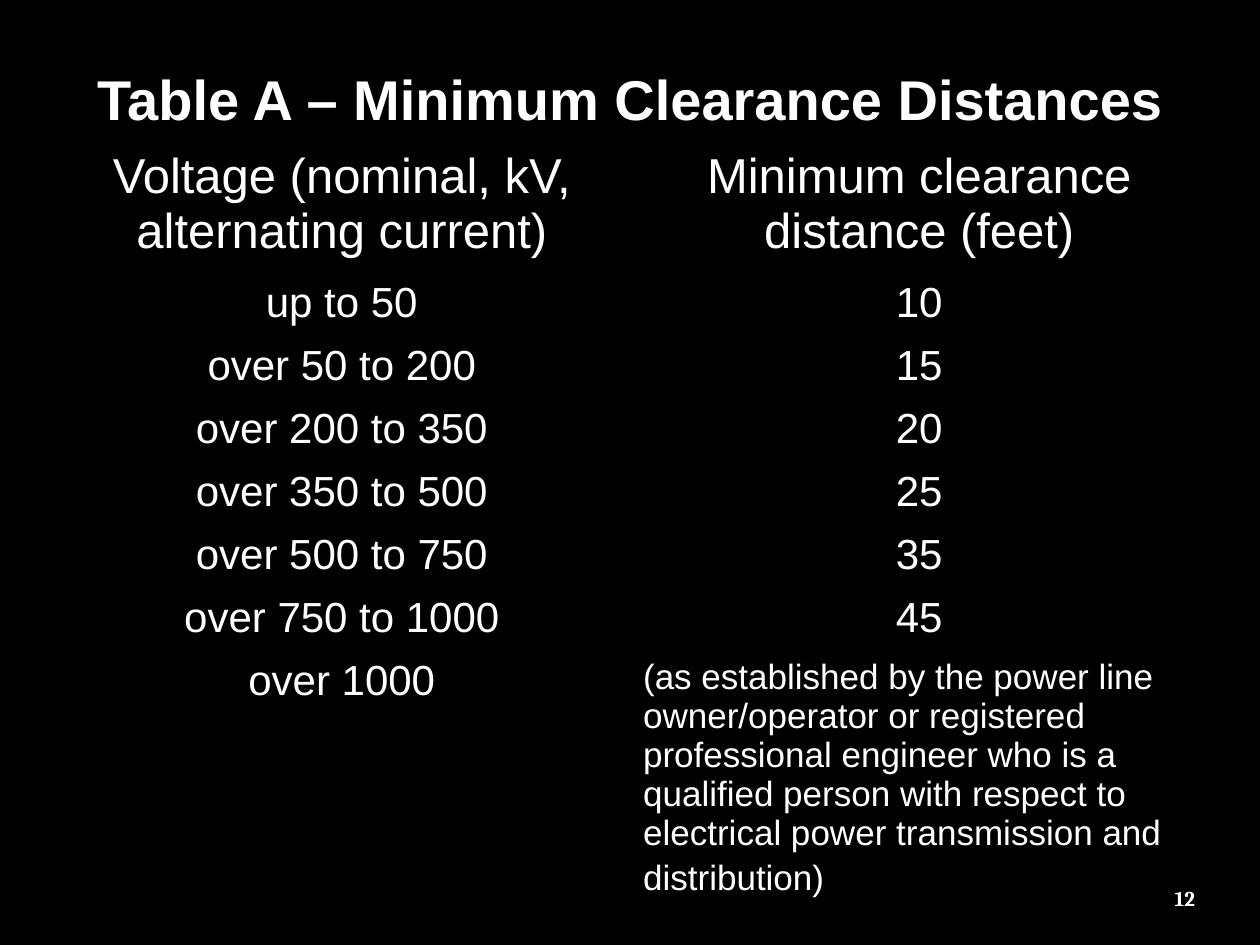
from dataclasses import dataclass

import pptx
import pptx.dml.color
import pptx.enum.text
import pptx.oxml
import pptx.oxml.ns
import pptx.util
from lxml import etree

Cm = pptx.util.Cm
Pt = pptx.util.Pt
ALIGN = pptx.enum.text.PP_ALIGN
BLACK = "000000"
WHITE = "FFFFFF"
TITLE = "Table A – Minimum Clearance Distances"
NOTE = (
    "(as established by the power line owner/operator or registered "
    "professional engineer who is a qualified person with respect to "
    "electrical power transmission and distribution)"
)


@dataclass
class Row:
    voltage: str
    distance: str
    height: float = 1.12
    size: int = 24


ROWS = [
    Row("Voltage (nominal, kV, alternating current)",
        "Minimum clearance distance (feet)", 2.13, 28),
    Row("up to 50", "10"),
    Row("over 50 to 200", "15"),
    Row("over 200 to 350", "20"),
    Row("over 350 to 500", "25"),
    Row("over 500 to 750", "35"),
    Row("over 750 to 1000", "45"),
]


def rgb(value: str) -> pptx.dml.color.RGBColor:
    return pptx.dml.color.RGBColor.from_string(value)


def style_run(r, size: int, bold: bool = False, font: str = "Arial") -> None:
    r.font.name = font
    r.font.size = Pt(size)
    r.font.bold = bold
    r.font.color.rgb = rgb(WHITE)


def write(tf, text: str, size: int, align=ALIGN.CENTER,
          bold: bool = False, font: str = "Arial") -> None:
    tf.text = text
    p = tf.paragraphs[0]
    p.alignment = align
    for r in p.runs:
        style_run(r, size, bold, font)


def add_borders(cell, color: str, width: float) -> None:
    qn = pptx.oxml.ns.qn
    props = cell._tc.get_or_add_tcPr()
    for side in "LRTB":
        ln = etree.SubElement(props, qn(f"a:ln{side}"), w=str(Pt(width)))
        fill = etree.SubElement(ln, qn("a:solidFill"))
        etree.SubElement(fill, qn("a:srgbClr"), val=color)


def add_page_number(s, number: str) -> None:
    box = s.shapes.add_textbox(Cm(18.42), Cm(17.73), Cm(5.92), Cm(1.32))
    box.text_frame.word_wrap = True
    write(box.text_frame, number, 12, ALIGN.RIGHT, True, "Cambria")


def add_clearance_table(s) -> None:
    heights = [1.35, *(row.height for row in ROWS), 5.64]
    frame = s.shapes.add_table(len(heights), 2, Cm(1.07), Cm(1.27),
                               Cm(23.28), Cm(sum(heights)))
    table = frame.table
    table.first_row = False
    table.horz_banding = False
    for row, height in zip(table.rows, heights):
        row.height = Cm(height)
    for cell in table.iter_cells():
        add_borders(cell, BLACK, 1)
        cell.fill.background()

    title = table.cell(0, 0)
    title.merge(table.cell(0, 1))
    title.fill.solid()
    title.fill.fore_color.rgb = rgb(BLACK)
    write(title.text_frame, TITLE, 32, bold=True)

    for i, row in enumerate(ROWS, start=1):
        write(table.cell(i, 0).text_frame, row.voltage, row.size)
        write(table.cell(i, 1).text_frame, row.distance, row.size)

    last = len(heights) - 1
    write(table.cell(last, 0).text_frame, "over 1000", 24)
    tf = table.cell(last, 1).text_frame
    write(tf, NOTE, 20, ALIGN.LEFT)
    r = tf.paragraphs[0].add_run()
    r.text = " "
    style_run(r, 24)


def main() -> None:
    prs = pptx.Presentation()
    prs.slide_width = Cm(25.4)
    prs.slide_height = Cm(19.05)
    s = prs.slides.add_slide(prs.slide_layouts[6])
    s.background.fill.solid()
    s.background.fill.fore_color.rgb = rgb(BLACK)
    add_page_number(s, "12")
    add_clearance_table(s)
    prs.save("out.pptx")


if __name__ == "__main__":
    main()
